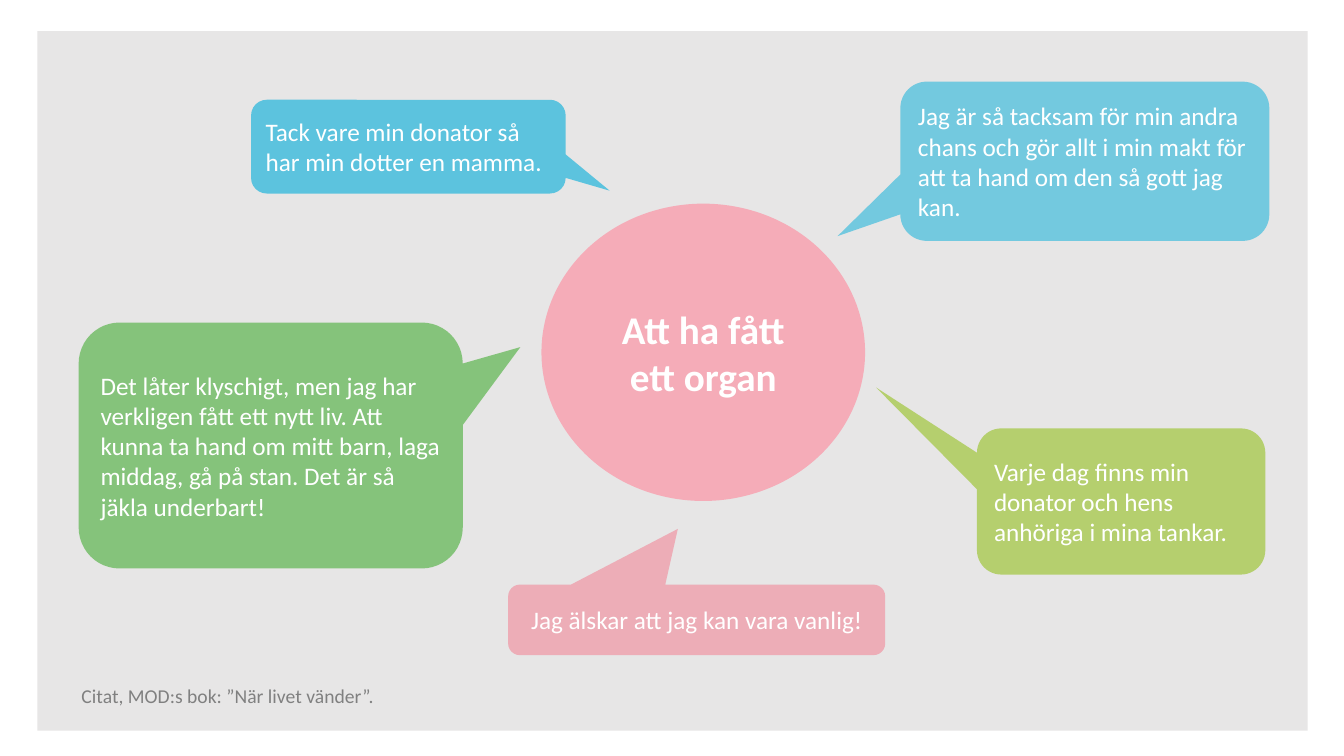
from dataclasses import dataclass

from lxml import etree
from pptx import Presentation
from pptx.dml.color import RGBColor
from pptx.enum.shapes import MSO_SHAPE
from pptx.enum.text import MSO_ANCHOR, PP_ALIGN
from pptx.oxml.ns import qn
from pptx.util import Inches, Pt

RECT = MSO_SHAPE.RECTANGLE
CIRCLE = MSO_SHAPE.FLOWCHART_CONNECTOR
CALLOUT = MSO_SHAPE.ROUNDED_RECTANGULAR_CALLOUT
LEFT, CENTER = PP_ALIGN.LEFT, PP_ALIGN.CENTER
TOP, MIDDLE = MSO_ANCHOR.TOP, MSO_ANCHOR.MIDDLE


@dataclass(frozen=True)
class Theme:
    """Colours, font and type sizes of the slide."""
    font: str = "Calibri"
    panel: str = "E7E6E6"
    topic: str = "F5ACB8"
    blue: str = "00ADD9"
    green: str = "45AC34"
    lime: str = "95C11F"
    pink: str = "F18798"
    white: str = "FFFFFF"
    grey: str = "808080"
    topic_size: int = 28
    quote_size: int = 18
    source_size: int = 14


THEME = Theme()

QUOTES = [
    ("Tack vare min donator så har min dotter en mamma.",
     (2.49, 0.99, 3.12, 0.93), (0.64, 0.47), THEME.blue, 60, LEFT),
    ("Det låter klyschigt, men jag har verkligen fått ett nytt liv. Att kunna "
     "ta hand om mitt barn, laga middag, gå på stan. Det är så jäkla underbart!",
     (0.78, 3.2, 3.81, 2.44), (0.65, -0.4), THEME.green, 60, LEFT),
    ("Varje dag finns min donator och hens anhöriga i mina tankar.",
     (9.69, 4.25, 2.86, 1.45), (-0.85, -0.78), THEME.lime, 60, LEFT),
    ("Jag älskar att jag kan vara vanlig!",
     (5.04, 5.8, 3.74, 0.7), (-0.05, -1.29), THEME.pink, 60, CENTER),
    ("Jag är så tacksam för min andra chans och gör allt i min makt för att "
     "ta hand om den så gott jag kan.",
     (8.93, 0.81, 3.66, 1.58), (-0.67, 0.47), THEME.blue, 50, LEFT),
]


def add_filled(slide, kind, box, color, opacity=100):
    """Add a borderless shape with a flat, optionally translucent fill."""
    sp = slide.shapes.add_shape(kind, *map(Inches, box))
    sp.shadow.inherit = False
    sp.line.fill.background()
    sp.fill.solid()
    sp.fill.fore_color.rgb = RGBColor.from_string(color)
    if opacity < 100:
        clr = sp.fill._xPr.find(qn("a:solidFill"))[0]
        etree.SubElement(clr, qn("a:alpha")).set("val", str(opacity * 1000))
    return sp


def write(sp, text, size, color, align=LEFT, anchor=MIDDLE, bold=False):
    """Set the wrapped text of a shape and its format."""
    tf = sp.text_frame
    tf.word_wrap = True
    tf.vertical_anchor = anchor
    p = tf.paragraphs[0]
    p.alignment = align
    r = p.add_run()
    r.text = text
    formats = {"name": THEME.font, "size": Pt(size), "bold": bold}
    for name, value in formats.items():
        setattr(r.font, name, value)
    r.font.color.rgb = RGBColor.from_string(color)


def add_topic(slide, box):
    """Add the central circle with the topic."""
    sp = add_filled(slide, CIRCLE, box, THEME.topic)
    write(sp, "Att ha fått ett organ", THEME.topic_size, THEME.white, CENTER, bold=True)


def add_quote(slide, text, box, tip, color, opacity, align):
    """Add a speech bubble whose tip is offset from its centre in box sizes."""
    sp = add_filled(slide, CALLOUT, box, color, opacity)
    sp.adjustments[0], sp.adjustments[1] = tip
    write(sp, text, THEME.quote_size, THEME.white, align)


def add_source(slide, box):
    """Add the source line of the quotes."""
    sp = slide.shapes.add_textbox(*map(Inches, box))
    write(sp, "Citat, MOD:s bok: ”När livet vänder”.",
          THEME.source_size, THEME.grey, anchor=TOP)


def main():
    """Build and save the slide."""
    prs = Presentation()
    prs.slide_width, prs.slide_height = Inches(13.33), Inches(7.5)
    slide = prs.slides.add_slide(prs.slide_layouts[6])
    add_filled(slide, RECT, (0.37, 0.31, 12.6, 6.94), THEME.panel)
    add_topic(slide, (5.37, 2.02, 3.21, 2.95))
    for quote in QUOTES:
        add_quote(slide, *quote)
    add_source(slide, (0.71, 6.74, 5.74, 0.57))
    prs.save("out.pptx")


if __name__ == "__main__":
    main()
